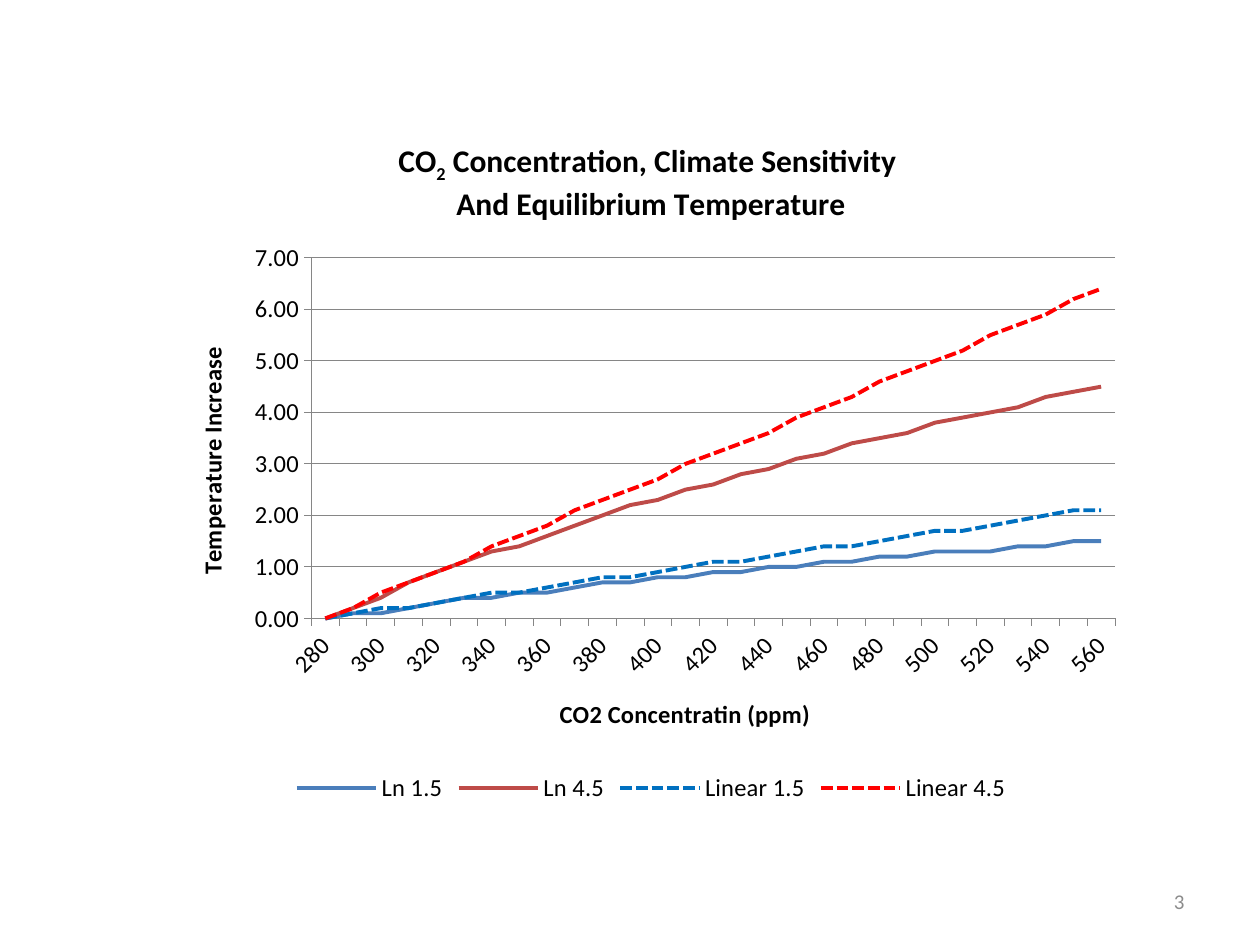
from dataclasses import dataclass
from math import log2

from lxml import etree
from pptx import Presentation
from pptx.chart.data import CategoryChartData
from pptx.dml.color import RGBColor
from pptx.enum.chart import XL_CHART_TYPE, XL_LEGEND_POSITION, XL_TICK_MARK
from pptx.enum.dml import MSO_LINE
from pptx.enum.text import MSO_ANCHOR, PP_ALIGN
from pptx.oxml.ns import qn
from pptx.util import Cm, Pt

LINE = XL_CHART_TYPE.LINE
BOTTOM = XL_LEGEND_POSITION.BOTTOM
OUT = XL_TICK_MARK.OUTSIDE
NONE = XL_TICK_MARK.NONE
SOLID = MSO_LINE.SOLID
DASH = MSO_LINE.SQUARE_DOT
MIDDLE = MSO_ANCHOR.MIDDLE
CENTER = PP_ALIGN.CENTER
RIGHT = PP_ALIGN.RIGHT


@dataclass(frozen=True)
class Theme:
    font: str = "Calibri"
    ink: str = "000000"
    gray: str = "8C8C8C"
    grid: str = "868686"
    title: int = 18
    label: int = 14
    note: int = 12
    thin: float = 0.5
    thick: float = 2.25


THEME = Theme()
WIDE, HIGH = Cm(19.47), Cm(13.97)
BASE = 280
LEVELS = range(BASE, 561, 10)
CURVES = [
    ("Ln 1.5", "4A7EBB", SOLID),
    ("Ln 4.5", "BE4B48", SOLID),
    ("Linear 1.5", "0070C0", DASH),
    ("Linear 4.5", "FF0000", DASH),
]


def style(font, size, color=THEME.ink, bold=False):
    font.name = THEME.font
    font.size = Pt(size)
    font.bold = bold
    font.color.rgb = RGBColor.from_string(color)


def write(para, text, size=THEME.label, color=THEME.ink, bold=False,
          align=CENTER, sub=False):
    run = para.add_run()
    run.text = text
    style(run.font, size, color, bold)
    para.alignment = align
    if sub:
        run.font._element.set("baseline", "-25000")


def stroke(line, color, width=THEME.thin, dash=SOLID):
    line.color.rgb = RGBColor.from_string(color)
    line.width = Pt(width)
    line.dash_style = dash


def warming(name):
    kind, rate = name.split()
    rise = [float(rate) * log2(level / BASE) for level in LEVELS]
    if kind == "Linear":
        rise = [rise[1] * step for step in range(len(LEVELS))]
    return [round(value, 1) for value in rise]


def set_axis(axis, title):
    axis.major_tick_mark = OUT
    axis.minor_tick_mark = NONE
    style(axis.tick_labels.font, THEME.label)
    stroke(axis.format.line, THEME.grid)
    write(axis.axis_title.text_frame.paragraphs[0], title, bold=True)


def set_plot(chart, x, y, w, h):
    area = chart._chartSpace.chart.plotArea
    for old in area.findall(qn("c:layout")):
        area.remove(old)
    layout = etree.Element(qn("c:layout"))
    area.insert(0, layout)
    manual = etree.SubElement(layout, qn("c:manualLayout"))
    parts = [("layoutTarget", "inner"), ("xMode", "edge"), ("yMode", "edge"),
             ("x", x / WIDE), ("y", y / HIGH), ("w", w / WIDE), ("h", h / HIGH)]
    for tag, value in parts:
        etree.SubElement(manual, qn(f"c:{tag}")).set("val", str(value))


def add_graph(slide):
    data = CategoryChartData(number_format="0.00")
    data.categories = [str(level) for level in LEVELS]
    for name, _, _ in CURVES:
        data.add_series(name, warming(name))
    chart = slide.shapes.add_chart(
        LINE, Cm(3.39), Cm(2.33), WIDE, HIGH, data).chart
    style(chart.font, 10)

    frame = chart.chart_title.text_frame
    chart.chart_title.include_in_layout = False
    head = frame.paragraphs[0]
    look = dict(size=THEME.title, bold=True)
    write(head, "CO", **look)
    write(head, "2", sub=True, **look)
    write(head, " Concentration, Climate Sensitivity ", **look)
    write(frame.add_paragraph(), "And Equilibrium Temperature", **look)

    set_axis(chart.category_axis, "CO2 Concentratin (ppm)")
    rise = chart.value_axis
    set_axis(rise, "Temperature Increase")
    rise.minimum_scale, rise.maximum_scale, rise.major_unit = 0, 7, 1
    rise.tick_labels.number_format = "0.00"
    rise.tick_labels.number_format_is_linked = False
    stroke(rise.major_gridlines.format.line, THEME.grid)

    chart.has_legend = True
    chart.legend.position = BOTTOM
    chart.legend.include_in_layout = False
    style(chart.legend.font, THEME.label)
    plot = chart.plots[0]
    plot.vary_by_categories = False
    for curve, (_, color, dash) in zip(plot.series, CURVES):
        curve.smooth = False
        stroke(curve.format.line, color, THEME.thick, dash)
    set_plot(chart, Cm(2.89), Cm(2.87), Cm(16.2), Cm(7.27))


def add_note(slide, text):
    frame = slide.shapes.add_textbox(
        Cm(18.2), Cm(17.66), Cm(5.93), Cm(1.01)).text_frame
    frame.word_wrap = True
    frame.vertical_anchor = MIDDLE
    write(frame.paragraphs[0], text, size=THEME.note, color=THEME.gray,
          align=RIGHT)


def main():
    deck = Presentation()
    deck.slide_width, deck.slide_height = Cm(25.4), Cm(19.05)
    slide = deck.slides.add_slide(deck.slide_layouts[6])
    add_graph(slide)
    add_note(slide, "3")
    deck.save("out.pptx")


if __name__ == "__main__":
    main()
